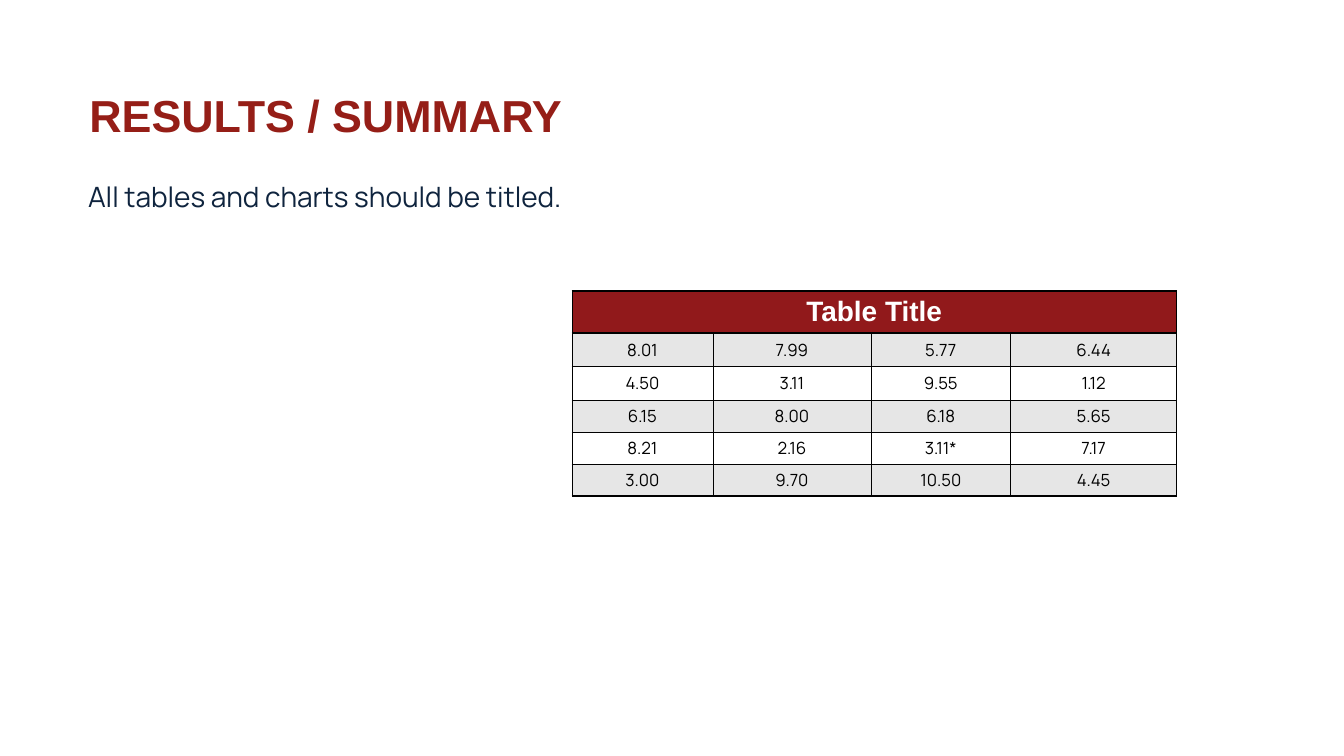
import dataclasses

import pptx
import pptx.dml.color
import pptx.enum.text
import pptx.oxml
import pptx.oxml.ns
import pptx.util
from pptx.util import Inches

ALIGN = pptx.enum.text.PP_ALIGN
ANCHOR = pptx.enum.text.MSO_ANCHOR
GROW = pptx.enum.text.MSO_AUTO_SIZE.SHAPE_TO_FIT_TEXT


@dataclasses.dataclass(frozen=True)
class Theme:
    """Colours, fonts and sizes of the slide."""
    title: str = "951E17"
    text: str = "0F243E"
    head: str = "91191B"
    band: str = "E6E6E6"
    white: str = "FFFFFF"
    black: str = "000000"
    bold: str = "Arial"
    plain: str = "Manrope"
    big: int = 48
    mid: int = 30
    small: int = 18
    thick: float = 2
    thin: float = 0.75


THEME = Theme()
ROWS = (
    ("8.01", "7.99", "5.77", "6.44"),
    ("4.50", "3.11", "9.55", "1.12"),
    ("6.15", "8.00", "6.18", "5.65"),
    ("8.21", "2.16", "3.11*", "7.17"),
    ("3.00", "9.70", "10.50", "4.45"),
)
WIDTHS = (2.1, 2.35, 2.08, 2.47)
HEIGHTS = (0.63, 0.49, 0.5, 0.49, 0.47, 0.47)


def apply(item, form):
    """Set each attribute of the item from the format dict."""
    for name, value in form.items():
        setattr(item, name, value)


def margins(side, edge):
    """Return the margin settings for the sides and the top and bottom."""
    return {"margin_left": Inches(side), "margin_right": Inches(side),
            "margin_top": Inches(edge), "margin_bottom": Inches(edge)}


def write(para, text, face, size, color, bold, form):
    """Fill a paragraph with text in the given font and format."""
    para.text = text
    apply(para, form)
    apply(para.font, {"name": face, "size": pptx.util.Pt(size), "bold": bold})
    para.font.color.rgb = pptx.dml.color.RGBColor.from_string(color)


def place(shape, box, inset):
    """Move a placeholder to the box and set its text frame."""
    apply(shape, dict(zip(("left", "top", "width", "height"), map(Inches, box))))
    apply(shape.text_frame, {
        **margins(inset, inset), "word_wrap": True,
        "vertical_anchor": ANCHOR.TOP, "auto_size": GROW})
    return shape.text_frame.paragraphs[0]


def add_title(slide, box):
    """Place the slide title in the box."""
    para = place(slide.shapes.title, box, 0)
    write(para, "RESULTS / SUMMARY", THEME.bold, THEME.big, THEME.title, True,
          {"alignment": ALIGN.LEFT, "line_spacing": 1.4})


def add_body(slide, box):
    """Place the body sentence in the box without a bullet."""
    para = place(slide.placeholders[1], box, 0.1)
    props = para._p.get_or_add_pPr()
    apply(para, {"line_spacing": 1.15, "space_before": pptx.util.Pt(0)})
    props.set("marL", "0")
    props.set("indent", "0")
    props.append(pptx.oxml.parse_xml(
        f"<a:buNone {pptx.oxml.ns.nsdecls('a')}/>"))
    write(para, "All tables and charts should be titled.", THEME.plain,
          THEME.mid, THEME.text, False, {"alignment": ALIGN.JUSTIFY})


def edge(cell, upper, lower):
    """Draw the four borders of a cell."""
    props = cell._tc.get_or_add_tcPr()
    sides = {"L": THEME.thin, "R": THEME.thin, "T": upper, "B": lower}
    for side, width in sides.items():
        props.append(pptx.oxml.parse_xml(
            f"<a:ln{side} {pptx.oxml.ns.nsdecls('a')} w='{pptx.util.Pt(width)}'>"
            f"<a:solidFill><a:srgbClr val='{THEME.black}'/></a:solidFill>"
            f"</a:ln{side}>"))


def style(cell, fill, upper, lower, pads):
    """Set the borders, fill and margins of a cell."""
    edge(cell, upper, lower)
    cell.fill.solid()
    cell.fill.fore_color.rgb = pptx.dml.color.RGBColor.from_string(fill)
    apply(cell, {**pads, "vertical_anchor": ANCHOR.MIDDLE})


def add_grid(slide, box):
    """Place the titled table of results in the box."""
    table = slide.shapes.add_table(
        len(HEIGHTS), len(WIDTHS), *map(Inches, box)).table
    for col, width in zip(table.columns, WIDTHS):
        col.width = Inches(width)
    for row, height in zip(table.rows, HEIGHTS):
        row.height = Inches(height)
    center = {"alignment": ALIGN.CENTER}
    for cell in table.rows[0].cells:
        style(cell, THEME.head, THEME.thick, THEME.thick, margins(0.09, 0.05))
    head = table.cell(0, 0)
    head.merge(table.cell(0, len(WIDTHS) - 1))
    write(head.text_frame.paragraphs[0], "Table Title", THEME.bold, THEME.mid,
          THEME.white, True, center)
    for i, row in enumerate(ROWS, 1):
        fill = THEME.band if i % 2 else THEME.white
        upper = THEME.thick if i == 1 else THEME.thin
        lower = THEME.thick if i == len(ROWS) else THEME.thin
        for j, text in enumerate(row):
            cell = table.cell(i, j)
            style(cell, fill, upper, lower, margins(0.03, 0.01))
            write(cell.text_frame.paragraphs[0], text, THEME.plain,
                  THEME.small, THEME.black, False, center)


def main():
    """Build the results slide and save it."""
    deck = pptx.Presentation()
    apply(deck, {"slide_width": Inches(20), "slide_height": Inches(11.25)})
    slide = deck.slides.add_slide(deck.slide_layouts[1])
    add_title(slide, (1.33, 0.98, 15.74, 1.13))
    add_body(slide, (1.21, 2.5, 9, 0.78))
    add_grid(slide, (8.51, 4.33, sum(WIDTHS), sum(HEIGHTS)))
    deck.save("out.pptx")


if __name__ == "__main__":
    main()
